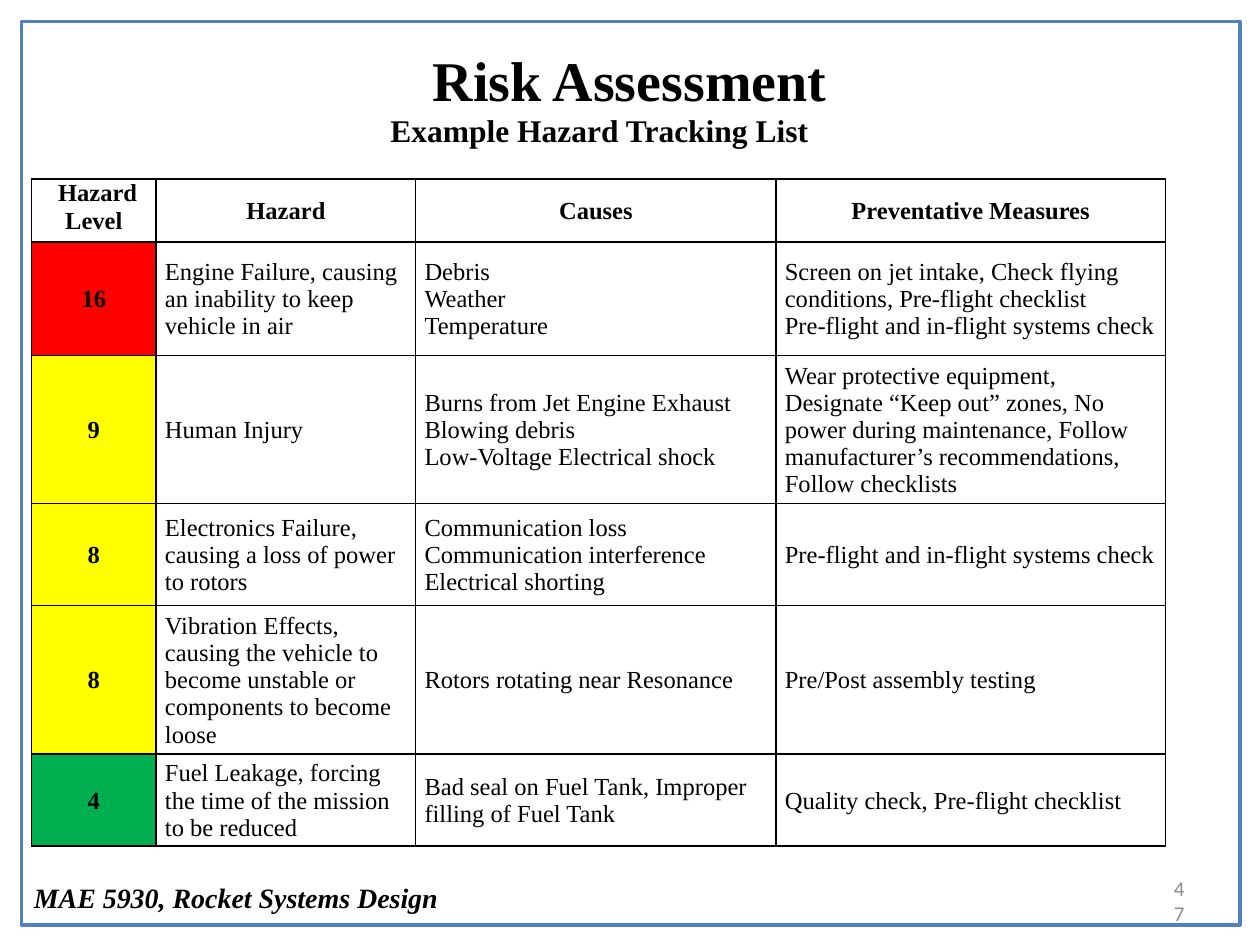
from lxml.etree import SubElement
from pptx import Presentation
from pptx.dml.color import RGBColor
from pptx.enum.shapes import MSO_SHAPE
from pptx.enum.text import MSO_ANCHOR, PP_ALIGN
from pptx.oxml.ns import qn
from pptx.util import Inches, Pt

BLACK = RGBColor(0x00, 0x00, 0x00)
BLUE = RGBColor(0x4F, 0x81, 0xBD)
GRAY = RGBColor(0x8C, 0x8C, 0x8C)
RED = RGBColor(0xFF, 0x00, 0x00)
YELLOW = RGBColor(0xFF, 0xFF, 0x00)
GREEN = RGBColor(0x00, 0xB0, 0x50)
SERIF = "Times New Roman"

COLUMN_WIDTHS = [0.99, 2.06, 2.86, 3.09]
ROW_HEIGHTS = [0.5, 0.9, 1.04, 0.81, 1.03, 0.73]
HEADINGS = ["Hazard Level", "Hazard", "Causes", "Preventative Measures"]
HAZARDS = [
    ("16", "Engine Failure, causing an inability to keep vehicle in air",
     "Debris\nWeather\nTemperature",
     "Screen on jet intake, Check flying conditions, Pre-flight checklist\n"
     "Pre-flight and in-flight systems check"),
    ("9", "Human Injury",
     "Burns from Jet Engine Exhaust\nBlowing debris\nLow-Voltage Electrical shock",
     "Wear protective equipment, Designate “Keep out” zones, No power during "
     "maintenance, Follow manufacturer’s recommendations, Follow checklists"),
    ("8", "Electronics Failure, causing a loss of power to rotors",
     "Communication loss\nCommunication interference\nElectrical shorting",
     "Pre-flight and in-flight systems check"),
    ("8", "Vibration Effects, causing the vehicle to become unstable or "
     "components to become loose",
     "Rotors rotating near Resonance", "Pre/Post assembly testing"),
    ("4", "Fuel Leakage, forcing the time of the mission to be reduced",
     "Bad seal on Fuel Tank, Improper filling of Fuel Tank",
     "Quality check, Pre-flight checklist"),
]


def level_color(level):
    """Return the risk colour of a hazard level."""
    if level >= 12:
        return RED
    return YELLOW if level >= 6 else GREEN


def write_text(text_frame, text, size=14, font=SERIF, color=BLACK, bold=False,
               italic=False, align=PP_ALIGN.LEFT):
    """Fill a text frame, one paragraph for each line of text."""
    text_frame.text = text
    for paragraph in text_frame.paragraphs:
        paragraph.alignment = align
        for run in paragraph.runs:
            run.font.name = font
            run.font.size = Pt(size)
            run.font.bold = bold
            run.font.italic = italic
            run.font.color.rgb = color


def set_borders(cell, color=BLACK, width=1):
    """Draw all four sides of a table cell."""
    properties = cell._tc.get_or_add_tcPr()
    for position, side in enumerate(("a:lnL", "a:lnR", "a:lnT", "a:lnB")):
        line = SubElement(properties, qn(side), w=str(Pt(width)))
        fill = SubElement(line, qn("a:solidFill"))
        SubElement(fill, qn("a:srgbClr"), val=str(color))
        properties.insert(position, line)


class SlideBuilder:
    """Holds the current slide and adds its elements."""

    def __init__(self, slide):
        self.slide = slide

    def add_frame(self, left, top, width, height):
        shape = self.slide.shapes.add_shape(
            MSO_SHAPE.RECTANGLE, Inches(left), Inches(top), Inches(width), Inches(height))
        shape.shadow.inherit = False
        shape.fill.background()
        shape.line.color.rgb = BLUE
        shape.line.width = Pt(2)

    def add_title(self, text, left, top, width, height):
        title = self.slide.shapes.title
        title.left, title.top = Inches(left), Inches(top)
        title.width, title.height = Inches(width), Inches(height)
        title.text_frame.vertical_anchor = MSO_ANCHOR.MIDDLE
        write_text(title.text_frame, text, size=32, bold=True, align=PP_ALIGN.CENTER)

    def add_text(self, text, left, top, width, height, wrap=False,
                 anchor=MSO_ANCHOR.TOP, **text_format):
        box = self.slide.shapes.add_textbox(
            Inches(left), Inches(top), Inches(width), Inches(height))
        box.text_frame.word_wrap = wrap
        box.text_frame.vertical_anchor = anchor
        write_text(box.text_frame, text, **text_format)

    def add_hazard_table(self, left, top):
        rows = [HEADINGS, *HAZARDS]
        table = self.slide.shapes.add_table(
            len(rows), len(HEADINGS), Inches(left), Inches(top),
            Inches(sum(COLUMN_WIDTHS)), Inches(sum(ROW_HEIGHTS))).table
        for column, width in zip(table.columns, COLUMN_WIDTHS):
            column.width = Inches(width)
        for row, height in zip(table.rows, ROW_HEIGHTS):
            row.height = Inches(height)
        for row_index, texts in enumerate(rows):
            for column_index, text in enumerate(texts):
                self.fill_cell(table.cell(row_index, column_index), text,
                               emphasis=row_index == 0 or column_index == 0)
            if row_index > 0:
                fill = table.cell(row_index, 0).fill
                fill.solid()
                fill.fore_color.rgb = level_color(int(texts[0]))
        # The first heading sits at the top, with its first line indented
        corner = table.cell(0, 0)
        corner.vertical_anchor = MSO_ANCHOR.TOP
        properties = corner.text_frame.paragraphs[0]._p.get_or_add_pPr()
        properties.set("indent", str(Inches(0.06)))

    def fill_cell(self, cell, text, emphasis):
        cell.margin_left = cell.margin_right = Inches(0.07)
        cell.margin_top, cell.margin_bottom = Inches(0.01), 0
        cell.vertical_anchor = MSO_ANCHOR.MIDDLE
        cell.fill.background()
        set_borders(cell)
        write_text(cell.text_frame, text, bold=emphasis,
                   align=PP_ALIGN.CENTER if emphasis else PP_ALIGN.LEFT)


def main():
    presentation = Presentation()
    presentation.slide_width, presentation.slide_height = Inches(10), Inches(7.5)
    title_only = presentation.slide_layouts[5]
    builder = SlideBuilder(presentation.slides.add_slide(title_only))

    # Frame and footer
    builder.add_frame(0.17, 0.17, 9.67, 7.17)
    builder.add_text("MAE 5930, Rocket Systems Design", 0.17, 6.94, 3.45, 0.37,
                     size=16, bold=True, italic=True)
    builder.add_text("47", 9.17, 6.95, 0.33, 0.4, wrap=True, anchor=MSO_ANCHOR.MIDDLE,
                     size=12, font="Calibri", color=GRAY, align=PP_ALIGN.RIGHT)

    # Title and subtitle
    builder.add_title("Risk Assessment", 0.5, 0, 9, 1.25)
    builder.add_text("Example Hazard Tracking List", 3, 0.83, 3.55, 0.4,
                     size=18, bold=True)

    # Hazard table
    builder.add_hazard_table(0.25, 1.42)

    presentation.save("out.pptx")


if __name__ == "__main__":
    main()
